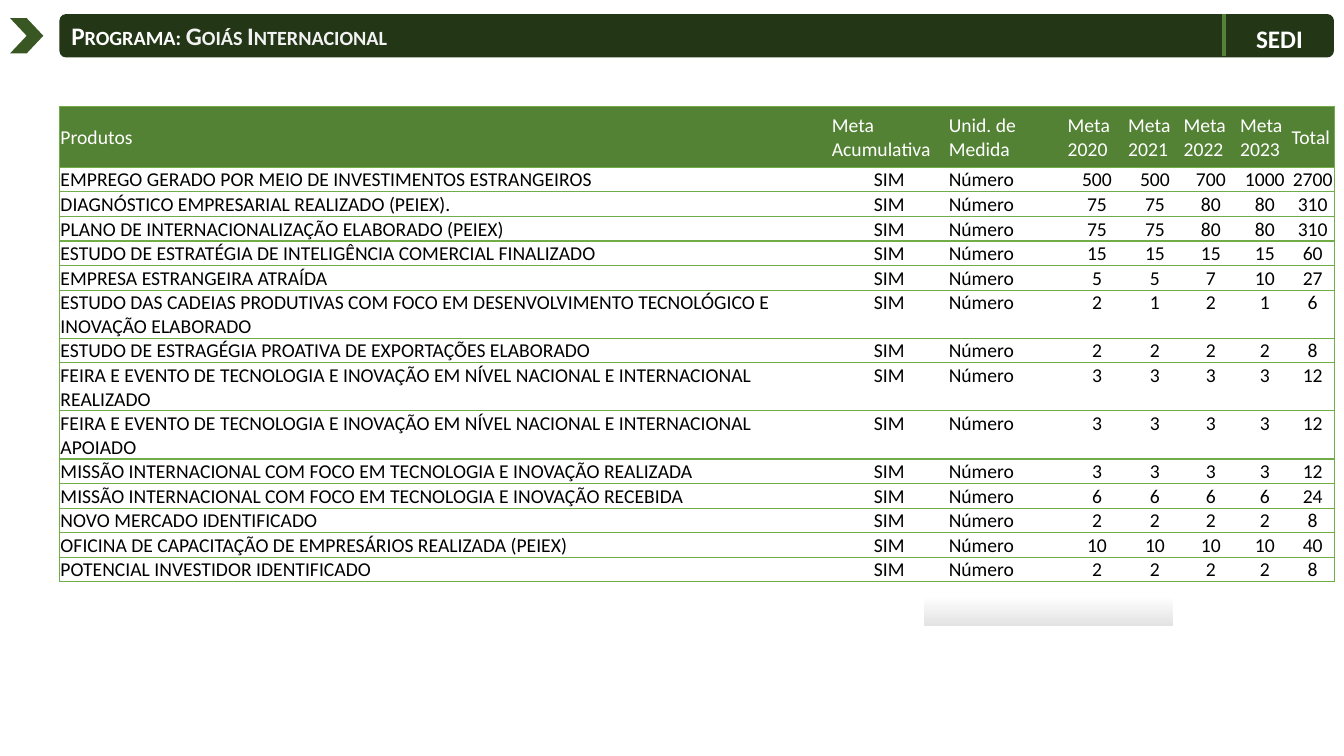
from dataclasses import dataclass

from lxml.etree import SubElement
from pptx import Presentation
from pptx.dml.color import RGBColor
from pptx.enum.shapes import MSO_CONNECTOR, MSO_SHAPE
from pptx.enum.text import MSO_ANCHOR, MSO_AUTO_SIZE, PP_ALIGN
from pptx.oxml.ns import qn
from pptx.util import Inches, Pt


@dataclass(frozen=True)
class Theme:
    font: str = "Calibri"
    title_size: int = 18
    table_size: int = 14
    white: str = "FFFFFF"
    black: str = "000000"
    program: str = "F2F2F2"
    banner: str = "233616"
    chevron: str = "385723"
    divider: str = "548238"
    header: str = "548235"
    border: str = "70AD47"
    shade: str = "E3E3E3"


THEME = Theme()


def write(paragraph, text, *, color, size, bold=False, small_caps=False, align=PP_ALIGN.LEFT):
    paragraph.alignment = align
    run = paragraph.add_run()
    run.text = text
    run.font.name = THEME.font
    run.font.size = Pt(size)
    run.font.bold = bold
    run.font.color.rgb = RGBColor.from_string(color)
    if small_caps:
        run.font._element.set("cap", "small")


def set_borders(cell, colors):
    """Draw 1 pt cell edges from a side-to-colour dict; None leaves an edge empty."""
    properties = cell._tc.get_or_add_tcPr()
    for side in "LRTB":
        line = SubElement(properties, qn(f"a:ln{side}"), w=str(Pt(1)))
        if colors[side]:
            fill = SubElement(line, qn("a:solidFill"))
            SubElement(fill, qn("a:srgbClr"), val=colors[side])
        else:
            SubElement(line, qn("a:noFill"))


presentation = Presentation()
presentation.slide_width = Inches(13.33)
presentation.slide_height = Inches(7.5)
slide = presentation.slides.add_slide(presentation.slide_layouts[6])
shapes = slide.shapes

# Heading: chevron, shaded strip and banner
chevron = shapes.add_shape(
    MSO_SHAPE.CHEVRON, Inches(0.1), Inches(0.18), Inches(0.33), Inches(0.35))
chevron.fill.solid()
chevron.fill.fore_color.rgb = RGBColor.from_string(THEME.chevron)

strip = shapes.add_shape(
    MSO_SHAPE.RECTANGLE, Inches(9.16), Inches(5.61), Inches(2.47), Inches(0.6))
strip.fill.gradient()
strip.fill.gradient_angle = 270
for stop, position, color in zip(
        strip.fill.gradient_stops, (0.5, 1), (THEME.white, THEME.shade)):
    stop.position = position
    stop.color.rgb = RGBColor.from_string(color)

banner = shapes.add_shape(
    MSO_SHAPE.ROUNDED_RECTANGLE, Inches(0.59), Inches(0.14), Inches(12.64), Inches(0.43))
banner.adjustments[0] = 0.15
banner.fill.solid()
banner.fill.fore_color.rgb = RGBColor.from_string(THEME.banner)
banner.text_frame.vertical_anchor = MSO_ANCHOR.MIDDLE
for text, color in (("Programa: ", THEME.white), ("Goiás Internacional", THEME.program)):
    write(banner.text_frame.paragraphs[0], text, color=color,
          size=THEME.title_size, bold=True, small_caps=True)

for shape in (chevron, strip, banner):
    shape.line.fill.background()
    shape.shadow.inherit = False

divider = shapes.add_connector(
    MSO_CONNECTOR.STRAIGHT, Inches(12.14), Inches(0.14), Inches(12.14), Inches(0.56))
divider.line.color.rgb = RGBColor.from_string(THEME.divider)
divider.line.width = Pt(3)
SubElement(divider._element.spPr, qn("a:effectLst"))

agency = shapes.add_textbox(Inches(12.36), Inches(0.18), Inches(0.67), Inches(0.4))
agency.text_frame.word_wrap = False
agency.text_frame.auto_size = MSO_AUTO_SIZE.SHAPE_TO_FIT_TEXT
write(agency.text_frame.paragraphs[0], "SEDI", color=THEME.white,
      size=THEME.title_size, bold=True)

# Products and their yearly targets
headings = ("Produtos", "Meta Acumulativa", "Unid. de Medida", "Meta 2020",
            "Meta 2021", "Meta 2022", "Meta 2023", "Total")
products = (
    ("EMPREGO GERADO POR MEIO DE INVESTIMENTOS ESTRANGEIROS", 500, 500, 700, 1000, 2700),
    ("DIAGNÓSTICO EMPRESARIAL REALIZADO (PEIEX).", 75, 75, 80, 80, 310),
    ("PLANO DE INTERNACIONALIZAÇÃO ELABORADO (PEIEX)", 75, 75, 80, 80, 310),
    ("ESTUDO DE ESTRATÉGIA DE INTELIGÊNCIA COMERCIAL FINALIZADO", 15, 15, 15, 15, 60),
    ("EMPRESA ESTRANGEIRA ATRAÍDA", 5, 5, 7, 10, 27),
    ("ESTUDO DAS CADEIAS PRODUTIVAS COM FOCO EM DESENVOLVIMENTO TECNOLÓGICO E "
     "INOVAÇÃO ELABORADO", 2, 1, 2, 1, 6),
    ("ESTUDO DE ESTRAGÉGIA PROATIVA DE EXPORTAÇÕES ELABORADO", 2, 2, 2, 2, 8),
    ("FEIRA E EVENTO DE TECNOLOGIA E INOVAÇÃO EM NÍVEL NACIONAL E INTERNACIONAL "
     "REALIZADO", 3, 3, 3, 3, 12),
    ("FEIRA E EVENTO DE TECNOLOGIA E INOVAÇÃO EM NÍVEL NACIONAL E INTERNACIONAL "
     "APOIADO", 3, 3, 3, 3, 12),
    ("MISSÃO INTERNACIONAL COM FOCO EM TECNOLOGIA E INOVAÇÃO REALIZADA", 3, 3, 3, 3, 12),
    ("MISSÃO INTERNACIONAL COM FOCO EM TECNOLOGIA E INOVAÇÃO RECEBIDA", 6, 6, 6, 6, 24),
    ("NOVO MERCADO IDENTIFICADO", 2, 2, 2, 2, 8),
    ("OFICINA DE CAPACITAÇÃO DE EMPRESÁRIOS REALIZADA (PEIEX)", 10, 10, 10, 10, 40),
    ("POTENCIAL INVESTIDOR IDENTIFICADO", 2, 2, 2, 2, 8),
)
rows = [headings] + [(name, "SIM", "Número", *targets) for name, *targets in products]
column_widths = (7.65, 1.16, 1.18, 0.6, 0.55, 0.56, 0.51, 0.44)
HEADER_HEIGHT, ROW_HEIGHT = 0.6, 0.22
UNIT_COLUMN, LAST_COLUMN = 2, len(headings) - 1

targets_table = shapes.add_table(
    len(rows), len(headings), Inches(0.59), Inches(1.06), Inches(sum(column_widths)),
    Inches(HEADER_HEIGHT + ROW_HEIGHT * len(products))).table
targets_table.horz_banding = False
for column, width in zip(targets_table.columns, column_widths):
    column.width = Inches(width)

for row_index, values in enumerate(rows):
    is_header = row_index == 0
    targets_table.rows[row_index].height = Inches(HEADER_HEIGHT if is_header else ROW_HEIGHT)
    for column_index, value in enumerate(values):
        cell = targets_table.cell(row_index, column_index)
        set_borders(cell, {
            "L": THEME.border if column_index == 0 else None,
            "R": THEME.border if column_index == LAST_COLUMN else None,
            "T": THEME.border,
            "B": THEME.border,
        })
        cell.fill.solid()
        cell.fill.fore_color.rgb = RGBColor.from_string(
            THEME.header if is_header else THEME.white)
        cell.margin_left = cell.margin_right = cell.margin_top = Inches(0.01)
        cell.margin_bottom = Inches(0)
        in_middle = is_header or column_index == 0
        cell.vertical_anchor = MSO_ANCHOR.MIDDLE if in_middle else MSO_ANCHOR.TOP
        at_left = in_middle or column_index == UNIT_COLUMN
        write(cell.text_frame.paragraphs[0], str(value),
              color=THEME.white if is_header else THEME.black, size=THEME.table_size,
              align=PP_ALIGN.LEFT if at_left else PP_ALIGN.CENTER)

presentation.save("out.pptx")
